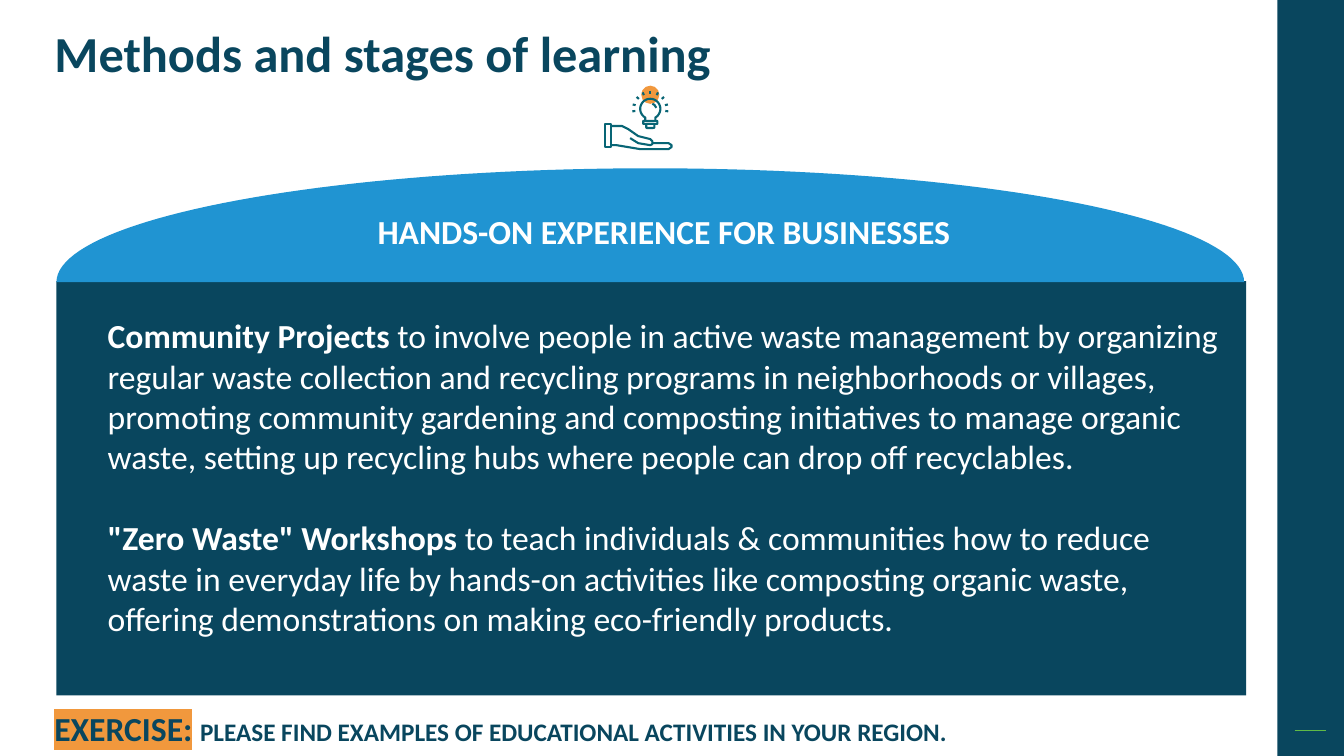
from math import cos, sin, radians
from lxml.etree import SubElement, Element
from pptx import Presentation
from pptx.dml.color import RGBColor
from pptx.enum.shapes import MSO_SHAPE as SHAPE, MSO_CONNECTOR as CONN
from pptx.enum.text import MSO_ANCHOR as ANCHOR, MSO_AUTO_SIZE as FIT, PP_ALIGN as ALIGN
from pptx.oxml.ns import qn
from pptx.util import Inches, Pt

COLORS = {k: RGBColor.from_string(v) for k, v in {
    "navy": "09465E", "blue": "2094D2", "white": "FFFFFF",
    "orange": "F1983D", "teal": "086575", "green": "60BA47"}.items()}

prs = Presentation()
prs.slide_width, prs.slide_height = Inches(13.33), Inches(7.5)
s = prs.slides.add_slide(prs.slide_layouts[5])


def paint(sp, fill=None, line=None, width=1.5):
    """Give a shape a fill and an outline, or none, and no shadow."""
    sp.shadow.inherit = False
    for part, color in ((sp.fill, fill), (sp.line.fill, line)):
        if color:
            part.solid()
            part.fore_color.rgb = COLORS[color]
        else:
            part.background()
    if line:
        sp.line.width = Pt(width)
    return sp


def outline(points, close=False, **colors):
    """Draw a freeform through points given in inches."""
    points = [(Inches(x), Inches(y)) for x, y in points]
    fb = s.shapes.build_freeform(*points[0])
    fb.add_line_segments(points[1:], close=close)
    return paint(fb.convert_to_shape(), **colors)


# Side band with its short line
paint(s.shapes.add_shape(SHAPE.RECTANGLE, Inches(12.67), 0, Inches(0.66), Inches(7.5)), "navy")
band_line = (12.84, 7.25, 13.15, 7.25)

# Title
title = s.shapes.title
title.left, title.top, title.width, title.height = map(Inches, (0.44, 0.24, 8.74, 0.58))
tf = title.text_frame
tf.text = "Methods and stages of learning"
tf.vertical_anchor, tf.auto_size = ANCHOR.TOP, FIT.NONE
p = tf.paragraphs[0]
p.alignment, p.line_spacing = ALIGN.LEFT, 0.9
p.font.name, p.font.size, p.font.bold = "Calibri", Pt(36), True
p.font.color.rgb = COLORS["navy"]

# Panel with a half-ellipse on top
paint(s.shapes.add_shape(SHAPE.RECTANGLE, Inches(0.56), Inches(2.79), Inches(11.8), Inches(4.11)), "navy")
dome = [(6.45 - 5.89 * cos(radians(a)), 2.8 - 1.13 * sin(radians(a))) for a in range(0, 181, 2)]
outline(dome, close=True, fill="blue")

# Texts: box, alignment, colour, paragraphs of (text, size, bold, highlight)
texts = [
    ((2, 2.04, 9.17, 0.5), ALIGN.CENTER, "white",
     [[("HANDS-ON EXPERIENCE FOR BUSINESSES", 24, True, None)]]),
    ((0.97, 3.08, 11.37, 3.6), ALIGN.LEFT, "white", [
        [("Community Projects", 24, True, None),
         (" to involve people in active waste management by organizing regular waste collection "
          "and recycling programs in neighborhoods or villages, promoting community gardening and "
          "composting initiatives to manage organic waste, setting up recycling hubs where people "
          "can drop off recyclables.", 24, False, None)],
        [("\"Zero Waste\" Workshops", 24, True, None),
         (" to teach individuals & communities how to reduce waste in everyday life by hands-on "
          "activities like composting organic waste, offering demonstrations on making "
          "eco-friendly products.", 24, False, None)]]),
    ((0.44, 6.97, 11.64, 0.5), ALIGN.LEFT, "navy", [
        [("EXERCISE:", 24, True, "orange"), (" ", 24, True, None),
         ("PLEASE FIND EXAMPLES OF EDUCATIONAL ACTIVITIES IN YOUR REGION.", 18, True, None)]]),
]
for box, align, color, paragraphs in texts:
    tf = s.shapes.add_textbox(*map(Inches, box)).text_frame
    tf.word_wrap = True
    for i, runs in enumerate(paragraphs):
        p = tf.add_paragraph() if i else tf.paragraphs[0]
        p.alignment = align
        if i:
            p.space_before = Pt(29)
        p.font.name = "Calibri"
        p.font.color.rgb = COLORS[color]
        for text, size, bold, highlight in runs:
            r = p.add_run()
            r.text = text
            r.font.size, r.font.bold = Pt(size), bold
            if highlight:
                mark = Element(qn("a:highlight"))
                SubElement(mark, qn("a:srgbClr"), val=str(COLORS[highlight]))
                r.font._element.insert(0, mark)

# Icon: glow and bulb
cx, cy = 6.45, 1.08
paint(s.shapes.add_shape(SHAPE.OVAL, Inches(6.36), Inches(0.85), Inches(0.18), Inches(0.18)), "orange")
glass = [(cx + 0.1 * cos(radians(a)), cy + 0.1 * sin(radians(a))) for a in range(120, 421, 10)]
outline([(6.4, 1.19)] + glass + [(6.5, 1.19)], line="teal")
outline([(6.47, 1.03), (6.49, 1.04), (6.51, 1.07)], line="teal")
for left, top, width, height in ((6.38, 1.2, 0.14, 0.03), (6.41, 1.23, 0.08, 0.04)):
    paint(s.shapes.add_shape(SHAPE.ROUNDED_RECTANGLE, *map(Inches, (left, top, width, height))), line="teal")

# Icon: hand
outline([(6, 1.23), (6.06, 1.23), (6.06, 1.46), (6, 1.46)], close=True, line="teal")
outline([(6.07, 1.25), (6.17, 1.25), (6.23, 1.28), (6.33, 1.35), (6.45, 1.38), (6.47, 1.4),
         (6.47, 1.43), (6.45, 1.44), (6.33, 1.42), (6.25, 1.37)], line="teal")
outline([(6.07, 1.44), (6.11, 1.44), (6.35, 1.48), (6.63, 1.48), (6.66, 1.46), (6.66, 1.44),
         (6.63, 1.42), (6.47, 1.42)], line="teal")

# Band line and rays around the bulb
lines = [(band_line, "green", 1)]
for a in (-8, 14, 41, 65, 90, 115, 139, 166, 188):
    dx, dy = cos(radians(a)), -sin(radians(a))
    lines.append(((cx + 0.15 * dx, cy + 0.15 * dy, cx + 0.18 * dx, cy + 0.18 * dy), "teal", 1.5))
for ends, color, width in lines:
    c = s.shapes.add_connector(CONN.STRAIGHT, *map(Inches, ends))
    c.line.color.rgb, c.line.width = COLORS[color], Pt(width)
    SubElement(c._element.spPr, qn("a:effectLst"))

prs.save("out.pptx")
